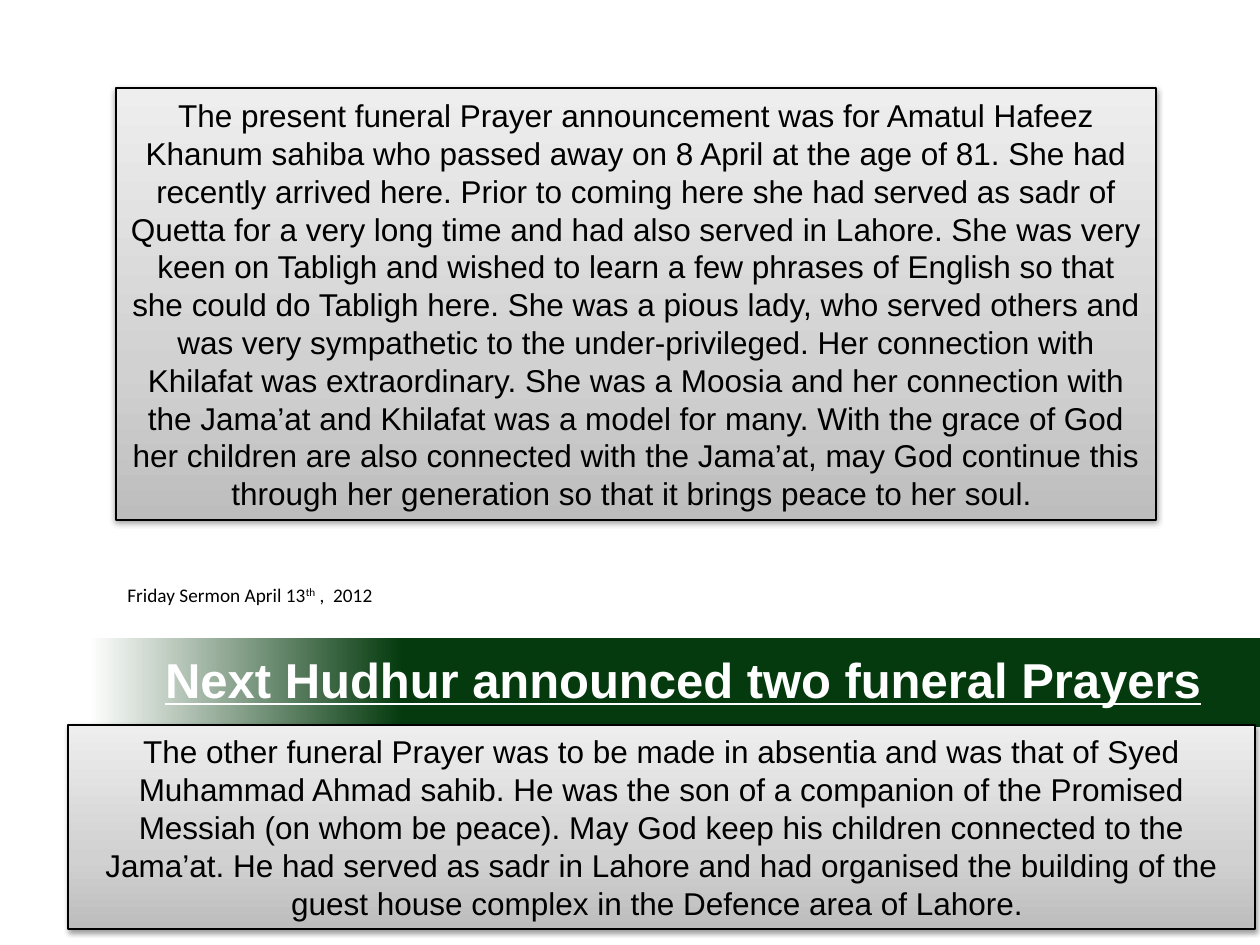
"""Build the slide announcing two funeral Prayers."""
from dataclasses import dataclass

import pptx
import pptx.dml.color
import pptx.enum.shapes
import pptx.enum.text
import pptx.oxml
import pptx.oxml.ns
import pptx.util

ALIGN = pptx.enum.text.PP_ALIGN
ANCHOR = pptx.enum.text.MSO_ANCHOR
FIT = pptx.enum.text.MSO_AUTO_SIZE
NS = pptx.oxml.ns.nsdecls("a")


@dataclass(frozen=True)
class Theme:
    ink: str = "000000"
    heading_ink: str = "FFFFFF"
    band: tuple = ((7, "FFFFFF"), (32, "043A0D"))
    panel: tuple = ((0, "BDBDBD"), (35, "D1D1D1"), (100, "EEEEEE"))
    font: str = "Arial"
    date_font: str = "Calibri"
    heading_size: int = 28
    body_size: int = 18
    date_size: int = 11


class SlideBuilder:
    def __init__(self, slide, theme):
        self.slide = slide
        self.theme = theme

    def px(self, *lengths):
        return [pptx.util.Emu(round(length * 914400 / 126)) for length in lengths]

    def run(self, paragraph, text, size, font, color):
        run = paragraph.add_run()
        run.text = text
        run.font.size = pptx.util.Pt(size)
        run.font.name = font
        run.font.color.rgb = pptx.dml.color.RGBColor.from_string(color)
        return run

    def gradient_rect(self, bounds, stops, angle):
        rect = self.slide.shapes.add_shape(
            pptx.enum.shapes.MSO_SHAPE.RECTANGLE, *self.px(*bounds))
        rect.shadow.inherit = False
        rect.fill.gradient()
        rect.fill.gradient_angle = angle
        stop_list = rect._element.spPr.find(".//" + pptx.oxml.ns.qn("a:gsLst"))
        for stop in list(stop_list):
            stop_list.remove(stop)
        for position, color in stops:
            stop_list.append(pptx.oxml.parse_xml(
                f'<a:gs {NS} pos="{position * 1000}"><a:srgbClr val="{color}"/></a:gs>'))
        return rect

    def band(self, bounds):
        self.gradient_rect(bounds, self.theme.band, 0).line.fill.background()

    def panel(self, bounds, text):
        panel = self.gradient_rect(bounds, self.theme.panel, 90)
        panel.line.color.rgb = pptx.dml.color.RGBColor.from_string(self.theme.ink)
        panel.line.width = pptx.util.Pt(0.75)
        effects = panel._element.spPr.find(pptx.oxml.ns.qn("a:effectLst"))
        effects.append(pptx.oxml.parse_xml(
            f'<a:outerShdw {NS} blurRad="40000" dist="20000" dir="5400000" rotWithShape="0">'
            f'<a:srgbClr val="{self.theme.ink}"><a:alpha val="38000"/></a:srgbClr>'
            '</a:outerShdw>'))
        frame = panel.text_frame
        frame.word_wrap = True
        frame.auto_size = FIT.SHAPE_TO_FIT_TEXT
        frame.vertical_anchor = ANCHOR.MIDDLE
        paragraph = frame.paragraphs[0]
        paragraph.alignment = ALIGN.CENTER
        self.run(paragraph, text, self.theme.body_size, self.theme.font, self.theme.ink)

    def heading(self, bounds, text):
        heading = self.slide.shapes.title
        heading.left, heading.top, heading.width, heading.height = self.px(*bounds)
        frame = heading.text_frame
        frame.word_wrap = True
        frame.auto_size = FIT.NONE
        frame.margin_left = frame.margin_right = 0
        frame.vertical_anchor = ANCHOR.MIDDLE
        paragraph = frame.paragraphs[0]
        paragraph.alignment = ALIGN.RIGHT
        run = self.run(paragraph, text, self.theme.heading_size,
                       self.theme.font, self.theme.heading_ink)
        run.font.bold = True
        run.font.underline = True

    def date(self, bounds, parts):
        frame = self.slide.shapes.add_textbox(*self.px(*bounds)).text_frame
        frame.word_wrap = True
        frame.auto_size = FIT.SHAPE_TO_FIT_TEXT
        for text, baseline in parts:
            run = self.run(frame.paragraphs[0], text, self.theme.date_size,
                           self.theme.date_font, self.theme.ink)
            run.font._element.set("baseline", str(baseline * 1000))


def main():
    deck = pptx.Presentation()
    deck.slide_width = pptx.util.Inches(10)
    deck.slide_height = pptx.util.Inches(7.5)
    page = deck.slides.add_slide(deck.slide_layouts[5])
    builder = SlideBuilder(page, Theme())

    builder.band((0, 638, 1260, 89))
    heading_element = page.shapes.title._element
    page.shapes._spTree.append(heading_element)
    builder.heading((95, 640, 1106, 78), "Next Hudhur announced two funeral Prayers")
    builder.panel(
        (116, 88, 1040, 432),
        "The present funeral Prayer announcement was for Amatul Hafeez Khanum sahiba "
        "who passed away on 8 April at the age of 81. She had recently arrived here. "
        "Prior to coming here she had served as sadr of Quetta for a very long time and "
        "had also served in Lahore. She was very keen on Tabligh and wished to learn a "
        "few phrases of English so that she could do Tabligh here. She was a pious lady, "
        "who served others and was very sympathetic to the under-privileged. Her "
        "connection with Khilafat was extraordinary. She was a Moosia and her connection "
        "with the Jama’at and Khilafat was a model for many. With the grace of God her "
        "children are also connected with the Jama’at, may God continue this through "
        "her generation so that it brings peace to her soul. ")
    builder.panel(
        (68, 725, 1187, 204),
        "The other funeral Prayer was to be made in absentia and was that of Syed "
        "Muhammad Ahmad sahib. He was the son of a companion of the Promised Messiah "
        "(on whom be peace). May God keep his children connected to the Jama’at. He had "
        "served as sadr in Lahore and had organised the building of the guest house "
        "complex in the Defence area of Lahore. ")
    builder.date((115, 577, 431, 36),
                 (("Friday Sermon April 13", 0), ("th", 30), (" ,  2012", 0)))
    deck.save("out.pptx")


if __name__ == "__main__":
    main()
